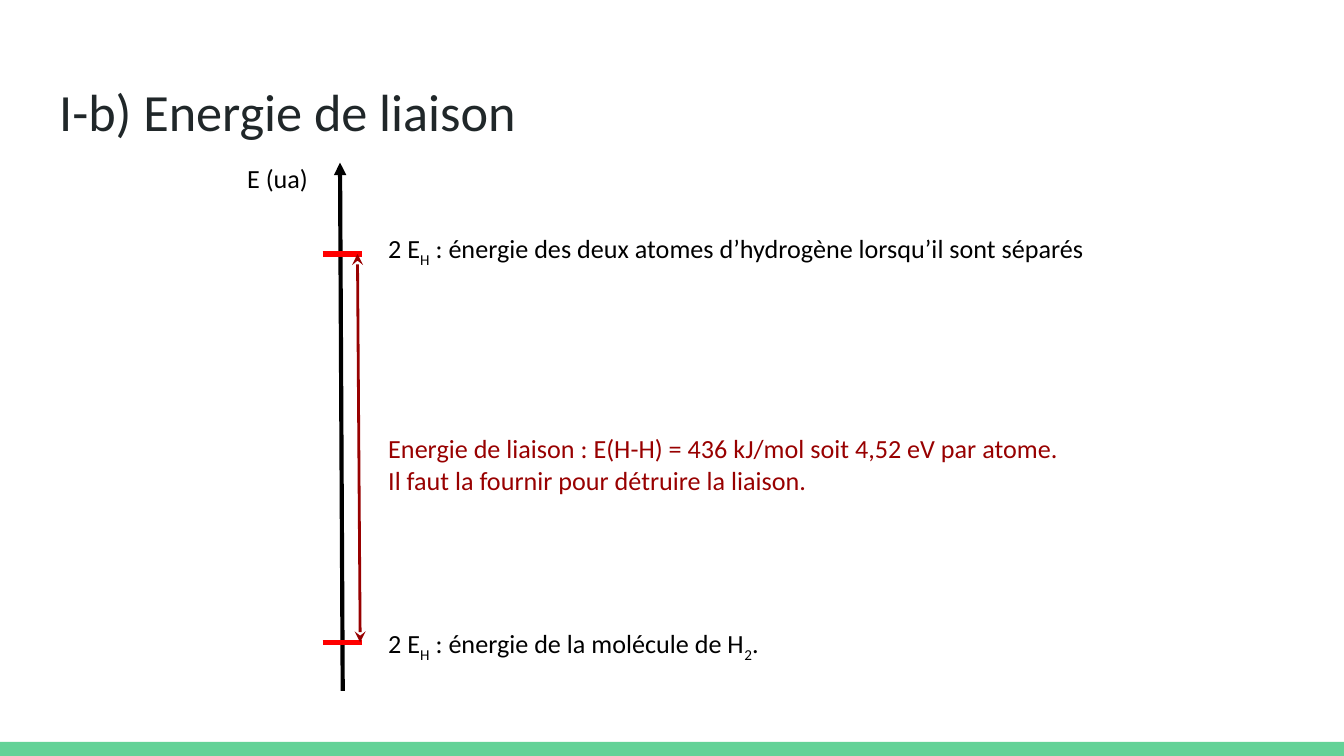
from dataclasses import dataclass

from lxml import etree
from pptx import Presentation
from pptx.dml.color import RGBColor
from pptx.enum.shapes import MSO_CONNECTOR, MSO_SHAPE
from pptx.enum.text import MSO_ANCHOR, MSO_AUTO_SIZE, PP_ALIGN
from pptx.oxml.ns import qn
from pptx.util import Inches, Pt

STRAIGHT = MSO_CONNECTOR.STRAIGHT
RECTANGLE = MSO_SHAPE.RECTANGLE
TOP = MSO_ANCHOR.TOP
NO_AUTOFIT = MSO_AUTO_SIZE.NONE
LEFT = PP_ALIGN.LEFT


@dataclass(frozen=True)
class Theme:
    font: str = "Calibri"
    title_size: int = 28
    label_size: int = 14
    title: str = "202729"
    ink: str = "000000"
    level: str = "FF0000"
    bond: str = "980000"
    band: str = "63D297"
    background: str = "FFFFFF"


theme = Theme()


def write_text(shape, box, paragraphs, size, color):
    shape.left, shape.top, shape.width, shape.height = map(Inches, box)
    frame = shape.text_frame
    frame.word_wrap = True
    frame.auto_size = NO_AUTOFIT
    frame.vertical_anchor = TOP
    frame.margin_left = frame.margin_right = Inches(0.1)
    frame.margin_top = frame.margin_bottom = Inches(0.1)
    for index, pieces in enumerate(paragraphs):
        paragraph = frame.add_paragraph() if index else frame.paragraphs[0]
        paragraph.alignment = LEFT
        for text, is_subscript in pieces:
            run = paragraph.add_run()
            run.text = text
            run.font.name = theme.font
            run.font.size = Pt(size)
            run.font.color.rgb = RGBColor.from_string(color)
            if is_subscript:
                run._r.get_or_add_rPr().set("baseline", "-25000")


def draw_line(start, end, color, width, head=None, tail=None):
    connector = slide.shapes.add_connector(STRAIGHT, *map(Inches, start + end))
    connector.line.color.rgb = RGBColor.from_string(color)
    connector.line.width = Pt(width)
    outline = connector.line._get_or_add_ln()
    for tag, arrow in (("a:headEnd", head), ("a:tailEnd", tail)):
        if arrow:
            etree.SubElement(outline, qn(tag), type=arrow, w="med", len="med")
    etree.SubElement(connector._element.spPr, qn("a:effectLst"))


presentation = Presentation()
presentation.slide_width = Inches(10)
presentation.slide_height = presentation.slide_width * 9 // 16
slide = presentation.slides.add_slide(presentation.slide_layouts[5])
slide.background.fill.solid()
slide.background.fill.fore_color.rgb = RGBColor.from_string(theme.background)

band_top = Inches(5.52)
footer_band = slide.shapes.add_shape(
    RECTANGLE,
    0,
    band_top,
    presentation.slide_width,
    presentation.slide_height - band_top,
)
footer_band.shadow.inherit = False
footer_band.fill.solid()
footer_band.fill.fore_color.rgb = RGBColor.from_string(theme.band)
footer_band.line.fill.background()

write_text(
    slide.shapes.title,
    (0.34, 0.49, 9.32, 0.63),
    [[("I-b) Energie de liaison", False)]],
    theme.title_size,
    theme.title,
)

separated_y, molecule_y = 1.89, 4.78
draw_line((2.55, 5.14), (2.53, 1.21), theme.ink, 2.25, tail="triangle")
for level_y in (separated_y, molecule_y):
    draw_line((2.4, level_y), (2.69, level_y), theme.level, 3)
draw_line(
    (2.66, separated_y), (2.68, molecule_y), theme.bond, 1.5, "stealth", "stealth"
)

label_x = 2.79
labels = [
    ((1.74, 1.11, 0.89, 0.42), theme.ink, [[("E (ua)", False)]]),
    (
        (label_x, 1.63, 6.75, 0.79),
        theme.ink,
        [[
            ("2 E", False),
            ("H", True),
            (" : énergie des deux atomes d’hydrogène lorsqu’il sont séparés", False),
        ]],
    ),
    (
        (label_x, 3.12, 6.75, 0.42),
        theme.bond,
        [
            [("Energie de liaison : E(H-H) = 436 kJ/mol soit 4,52 eV par atome.", False)],
            [("Il faut la fournir pour détruire la liaison.", False)],
        ],
    ),
    (
        (label_x, 4.57, 3.42, 0.42),
        theme.ink,
        [[
            ("2 E", False),
            ("H", True),
            (" : énergie de la molécule de H", False),
            ("2", True),
            (".", False),
        ]],
    ),
]
for box, color, paragraphs in labels:
    label = slide.shapes.add_textbox(*map(Inches, box))
    write_text(label, box, paragraphs, theme.label_size, color)

presentation.save("out.pptx")
